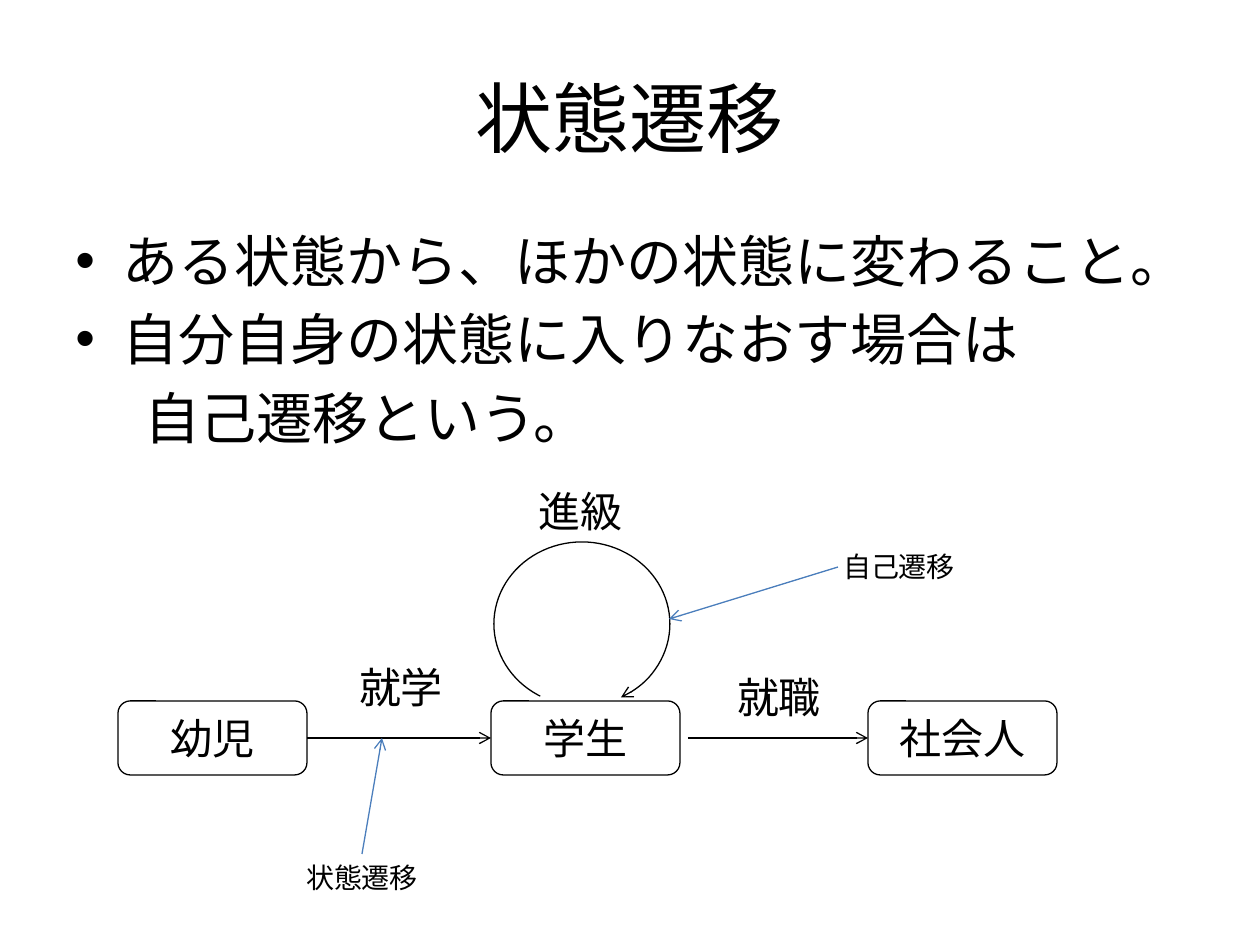
from dataclasses import dataclass

from lxml.etree import SubElement
from pptx import Presentation
from pptx.dml.color import RGBColor
from pptx.enum.lang import MSO_LANGUAGE_ID
from pptx.enum.shapes import MSO_CONNECTOR, MSO_SHAPE
from pptx.enum.text import MSO_ANCHOR, MSO_AUTO_SIZE, PP_ALIGN
from pptx.oxml.ns import qn
from pptx.util import Emu, Pt


@dataclass(frozen=True)
class Theme:
    ink: RGBColor = RGBColor(0x00, 0x00, 0x00)
    pointer: RGBColor = RGBColor(0x4B, 0x7E, 0xBC)
    heading_font: str = "Calibri"
    diagram_font: str = "Karla"
    title_size: float = 44
    body_size: float = 32
    body_gap: float = 6.4
    state_size: float = 24
    note_size: float = 16
    line_width: float = 0.75


@dataclass(frozen=True)
class Box:
    x: int
    y: int
    w: int
    h: int


@dataclass(frozen=True)
class Label:
    text: str
    x: int
    y: int


@dataclass(frozen=True)
class Bullet:
    text: str
    margin: int
    hanging: int


THEME = Theme()
PX_PER_INCH = 126

TITLE = Box(63, 38, 1134, 158)
BODY = Box(63, 220, 1134, 261)
BULLETS = [
    Bullet("ある状態から、ほかの状態に変わること。", 47, 47),
    Bullet("自分自身の状態に入りなおす場合は", 47, 47),
    Bullet("自己遷移という。", 69, 0),
]

STATE_Y, STATE_W, STATE_H = 701, 189, 74
MID_Y = STATE_Y + STATE_H // 2
STATES = [Label("幼児", 118, STATE_Y), Label("学生", 491, STATE_Y),
          Label("社会人", 868, STATE_Y)]
EVENT_W, EVENT_H = 136, 63
EVENTS = [Label("就学", 333, 655), Label("就職", 711, 665), Label("進級", 513, 479)]
NOTE_W, NOTE_H = 200, 47
TRANSITION_NOTE = Label("状態遷移", 262, 854)
SELF_NOTE = Label("自己遷移", 799, 543)
LOOP = Box(494, 542, 176, 164)
LOOP_START, LOOP_END = 120, 62  # degrees, clockwise from the right


def px(n: int) -> Emu:
    return Emu(round(n * 914400 / PX_PER_INCH))


def place(box: Box) -> tuple:
    return px(box.x), px(box.y), px(box.w), px(box.h)


def apply(target, values: dict) -> None:
    for name, value in values.items():
        setattr(target, name, value)


def write(p, text: str, size: float, font: str) -> None:
    r = p.add_run()
    r.text = text
    apply(r.font, {"size": Pt(size), "name": font,
                   "language_id": MSO_LANGUAGE_ID.JAPANESE})
    r.font.color.rgb = THEME.ink


def add_text(s, box: Box, text: str, size: float, font: str, **frame):
    sp = s.shapes.add_textbox(*place(box))
    tf = sp.text_frame
    apply(tf, {"word_wrap": True, **frame})
    p = tf.paragraphs[0]
    p.alignment = PP_ALIGN.CENTER
    write(p, text, size, font)
    return sp


def add_label(s, label: Label, w: int, h: int, size: float):
    return add_text(s, Box(label.x, label.y, w, h), label.text, size,
                    THEME.diagram_font, auto_size=MSO_AUTO_SIZE.SHAPE_TO_FIT_TEXT)


def add_bullets(s, box: Box, bullets: list[Bullet]) -> None:
    tf = s.shapes.add_textbox(*place(box)).text_frame
    tf.word_wrap = True
    for i, bullet in enumerate(bullets):
        p = tf.add_paragraph() if i else tf.paragraphs[0]
        if i:
            p.space_before = Pt(THEME.body_gap)
        pPr = p._p.get_or_add_pPr()
        pPr.set("marL", str(px(bullet.margin)))
        pPr.set("indent", str(-px(bullet.hanging)))
        if bullet.hanging:
            SubElement(pPr, qn("a:buFont"), typeface="Arial")
            SubElement(pPr, qn("a:buChar"), char="•")
        write(p, bullet.text, THEME.body_size, THEME.heading_font)


def style_line(sp, color: RGBColor, arrow: bool) -> None:
    sp.line.color.rgb = color
    sp.line.width = Pt(THEME.line_width)
    if arrow:
        SubElement(sp.line._get_or_add_ln(), qn("a:tailEnd"), type="arrow")


def add_outline(s, kind, box: Box, arrow: bool = False):
    sp = s.shapes.add_shape(kind, *place(box))
    sp.shadow.inherit = False
    sp.fill.background()
    style_line(sp, THEME.ink, arrow)
    return sp


def add_state(s, label: Label):
    box = Box(label.x, label.y, STATE_W, STATE_H)
    sp = add_outline(s, MSO_SHAPE.FLOWCHART_ALTERNATE_PROCESS, box)
    tf = sp.text_frame
    apply(tf, {"word_wrap": False, "vertical_anchor": MSO_ANCHOR.MIDDLE})
    p = tf.paragraphs[0]
    p.alignment = PP_ALIGN.CENTER
    write(p, label.text, THEME.state_size, THEME.diagram_font)
    return sp


def add_arrow(s, start: tuple[int, int], end: tuple[int, int], color: RGBColor):
    c = s.shapes.add_connector(MSO_CONNECTOR.STRAIGHT, *map(px, start + end))
    style_line(c, color, arrow=True)
    SubElement(c._element.spPr, qn("a:effectLst"))
    return c


def main() -> None:
    prs = Presentation()
    prs.slide_width, prs.slide_height = px(1260), px(945)
    s = prs.slides.add_slide(prs.slide_layouts[6])

    # Title and explanation
    add_text(s, TITLE, "状態遷移", THEME.title_size, THEME.heading_font,
             vertical_anchor=MSO_ANCHOR.MIDDLE)
    add_bullets(s, BODY, BULLETS)

    # States and the transitions between them
    child, student, worker = [add_state(s, state) for state in STATES]
    enrol = add_arrow(s, (307, MID_Y), (491, MID_Y), THEME.ink)
    enrol.begin_connect(child, 3)
    enrol.end_connect(student, 1)
    employ = add_arrow(s, (688, MID_Y), (868, MID_Y), THEME.ink)
    employ.end_connect(worker, 1)

    # Self transition; arc adjustments are 1/60000 degree over 100000
    loop = add_outline(s, MSO_SHAPE.ARC, LOOP, arrow=True)
    for i, angle in enumerate((LOOP_START, LOOP_END)):
        loop.adjustments[i] = angle * 0.6

    # Event names
    for event in EVENTS:
        add_label(s, event, EVENT_W, EVENT_H, THEME.state_size)

    # Notes and their pointers
    note = add_label(s, TRANSITION_NOTE, NOTE_W, NOTE_H, THEME.note_size)
    pointer = add_arrow(s, (362, 854), (382, MID_Y), THEME.pointer)
    pointer.begin_connect(note, 0)
    add_label(s, SELF_NOTE, NOTE_W, NOTE_H, THEME.note_size)
    add_arrow(s, (838, 567), (669, 619), THEME.pointer)

    prs.save("out.pptx")


if __name__ == "__main__":
    main()
